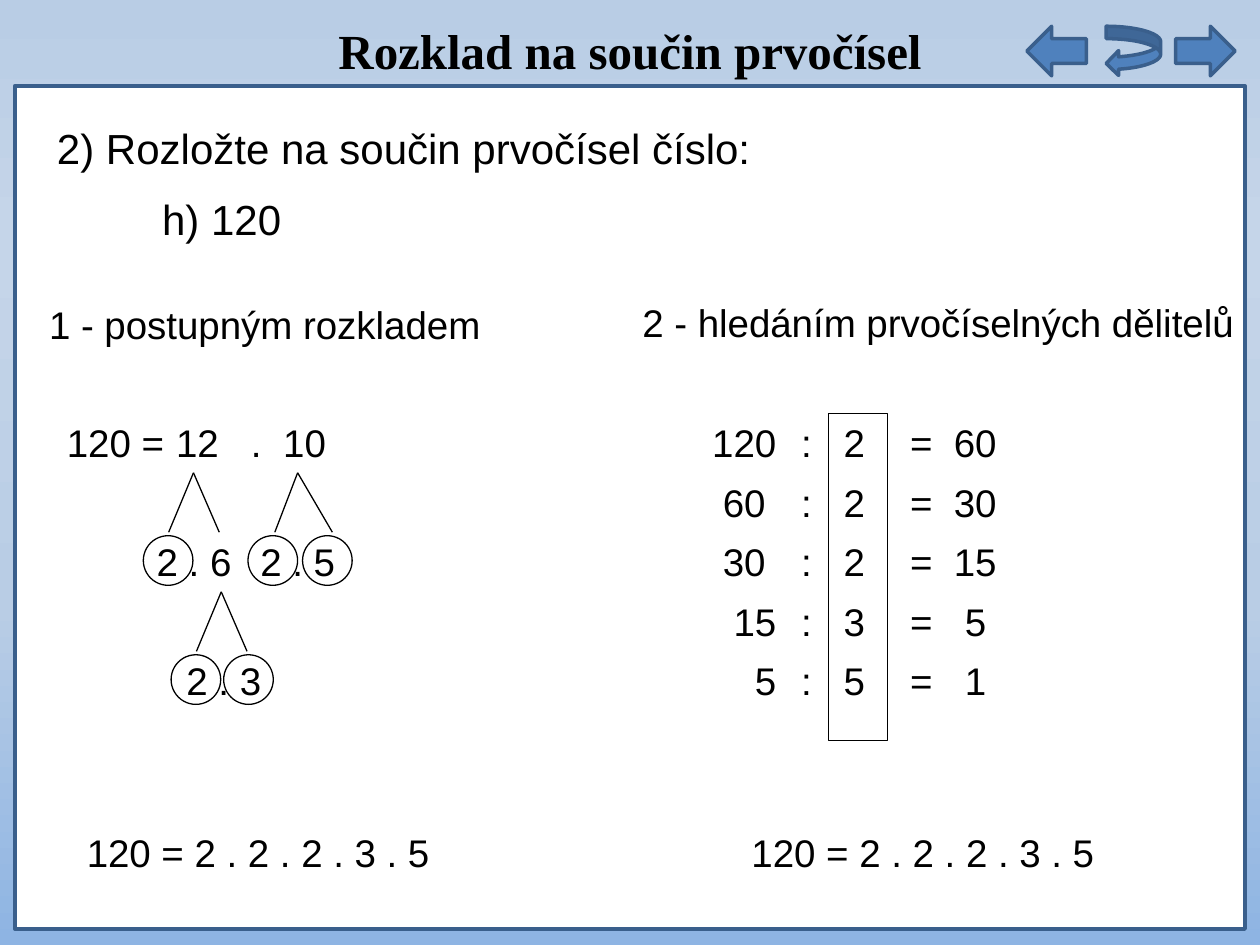
from lxml.etree import SubElement
from pptx import Presentation
from pptx.dml.color import RGBColor
from pptx.enum.shapes import MSO_CONNECTOR as Connector, MSO_SHAPE as Preset
from pptx.enum.text import MSO_AUTO_SIZE as AutoSize, PP_ALIGN as Align
from pptx.oxml.ns import qn
from pptx.util import Cm, Pt

BLACK = RGBColor(0x00, 0x00, 0x00)
WHITE = RGBColor(0xFF, 0xFF, 0xFF)
BLUE = RGBColor(0x4F, 0x81, 0xBD)
DARK_BLUE = RGBColor(0x3A, 0x5F, 0x8C)
SKY = RGBColor(0xB9, 0xCD, 0xE5)
PALE = RGBColor(0xC5, 0xD5, 0xE9)
DEEP = RGBColor(0x8E, 0xB4, 0xE3)

BODY = {"name": "Arial", "size": Pt(22), "bold": False}
TASK = BODY | {"size": Pt(24)}
TITLE = {"name": "Times New Roman", "size": Pt(28), "bold": True}


class SlideBuilder:
    thin = Pt(0.75)
    thick = Pt(2)
    row_height = 1.2

    def __init__(self, presentation):
        self.slide = presentation.slides.add_slide(presentation.slide_layouts[6])

    def background(self, stops):
        fill = self.slide.background.fill
        fill.gradient()
        fill.gradient_angle = 270
        stop_list = self.slide.element.find(".//" + qn("a:gsLst"))
        for old_stop in list(stop_list):
            stop_list.remove(old_stop)
        for percent, color in stops:
            stop = SubElement(stop_list, qn("a:gs"), pos=str(percent * 1000))
            SubElement(stop, qn("a:srgbClr"), val=str(color))

    def shape(self, preset, left, top, width, height,
              fill=None, line=BLACK, weight=thin):
        shape = self.slide.shapes.add_shape(
            preset, Cm(left), Cm(top), Cm(width), Cm(height))
        shape.shadow.inherit = False
        if fill is None:
            shape.fill.background()
        else:
            shape.fill.solid()
            shape.fill.fore_color.rgb = fill
        shape.line.color.rgb = line
        shape.line.width = weight

    def line(self, start_x, start_y, end_x, end_y):
        connector = self.slide.shapes.add_connector(
            Connector.STRAIGHT, Cm(start_x), Cm(start_y), Cm(end_x), Cm(end_y))
        connector.line.color.rgb = BLACK
        connector.line.width = self.thin
        SubElement(connector.element.spPr, qn("a:effectLst"))

    def branches(self, top, center, *ends):
        for end in ends:
            self.line(center, top, end, top + self.row_height)

    def text(self, content, left, top, width, height=row_height, style=BODY,
             align=Align.LEFT, wrap=True, indents=(0,), tabs=()):
        box = self.slide.shapes.add_textbox(
            Cm(left), Cm(top), Cm(width), Cm(height))
        frame = box.text_frame
        frame.word_wrap = wrap
        frame.auto_size = AutoSize.SHAPE_TO_FIT_TEXT
        frame.text = content
        for paragraph, indent in zip(frame.paragraphs, indents):
            paragraph.alignment = align
            if paragraph is not frame.paragraphs[-1] and len(indents) > 1 and not indent:
                paragraph.space_after = Pt(12)
            properties = paragraph._p.get_or_add_pPr()
            properties.set("marL", str(Cm(indent)))
            if tabs:
                tab_list = SubElement(properties, qn("a:tabLst"))
                for tab in tabs:
                    SubElement(tab_list, qn("a:tab"), pos=str(Cm(tab)), algn="l")
            font = paragraph.runs[0].font
            for name, value in style.items():
                setattr(font, name, value)
            font.color.rgb = BLACK


def main():
    presentation = Presentation()
    presentation.slide_width = Cm(25.4)
    presentation.slide_height = Cm(19.05)
    builder = SlideBuilder(presentation)
    builder.background([(0, SKY), (25, PALE), (64, SKY), (100, DEEP)])

    outline = {"line": DARK_BLUE, "weight": builder.thick}
    builder.shape(Preset.RECTANGLE, 0.3, 1.73, 24.8, 17, WHITE, **outline)
    builder.text("2) Rozložte na součin prvočísel číslo:\nh) 120",
                 0.9, 2.34, 22.45, 2.74, TASK, indents=(0, 2.12))
    builder.text("1 - postupným rozkladem", 0.74, 5.95, 13)
    builder.text("2 - hledáním prvočíselných dělitelů", 12.7, 5.91, 12.6, wrap=False)

    first_row = 8.33
    rows = [first_row + builder.row_height * index for index in range(5)]

    builder.text("120 =", 1.1, first_row, 2.8)
    builder.text("12\t.\t10", 3.3, first_row, 4, tabs=(1.51, 2.16))
    builder.branches(rows[1], 3.9, 3.4, 4.42)
    builder.branches(rows[1], 6, 5.54, 6.7)
    builder.branches(rows[3], 4.46, 3.96, 4.98)
    for content, left, row in [("2 . 6", 2.91, 2), ("2 . 5", 5, 2), ("2 . 3", 3.51, 4)]:
        builder.text(content, left, rows[row], 3.4)
    for left, row in [(2.89, 2), (5, 2), (6.1, 2), (3.45, 4), (4.51, 4)]:
        builder.shape(Preset.OVAL, left, rows[row] + 0.07, 1, 1)

    divisions = [("120 ", "2 ", "60"), ("60 ", "2 ", "30"), ("30 ", "2 ", "15"),
                 ("15", "3 ", "5"), ("5", "5 ", "1")]
    for top, (dividend, divisor, quotient) in zip(rows, divisions):
        builder.text(dividend, 13.9, top, 2, align=Align.RIGHT)
        builder.text(":", 15.9, top, 1)
        builder.text(divisor, 15.9, top, 2, align=Align.RIGHT)
        builder.text(f"=\t{quotient}", 18.1, top, 3,
                     tabs=(0.88 if len(quotient) == 2 else 1.1,))
    builder.shape(Preset.RECTANGLE, 16.7, first_row, 1.2, 6.6)

    for left in (1.5, 14.9):
        builder.text("120 = 2 . 2 . 2 . 3 . 5", left, 16.59, 7.6)

    builder.text("Rozklad na součin prvočísel", 0.3, 0.28, 24.8, 1.45,
                 TITLE, Align.CENTER)
    for preset, left, width in [(Preset.RIGHT_ARROW, 23.7, 1.2),
                                (Preset.LEFT_ARROW, 20.7, 1.2),
                                (Preset.CURVED_LEFT_ARROW, 22.3, 1.1)]:
        builder.shape(preset, left, 0.53, width, 1, BLUE, **outline)

    presentation.save("out.pptx")


if __name__ == "__main__":
    main()
